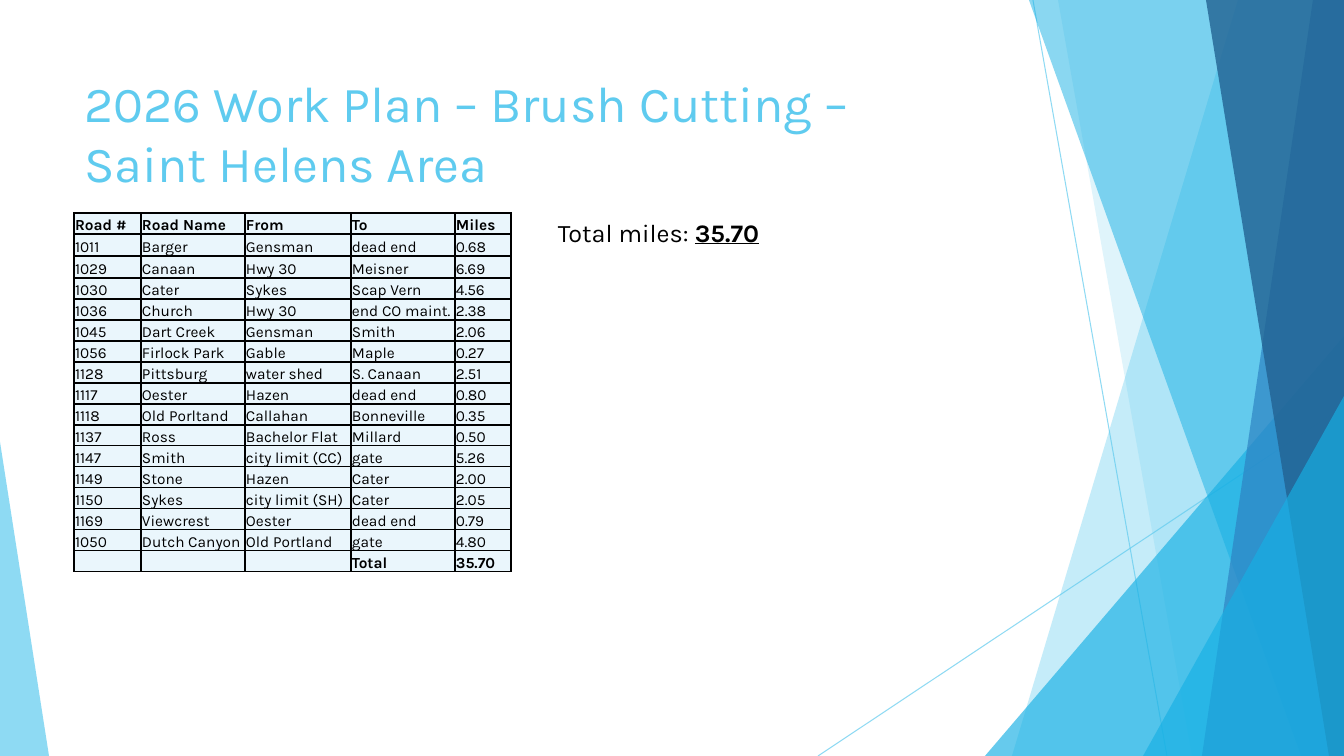
from pptx import Presentation
from pptx.dml.color import RGBColor
from pptx.enum.shapes import MSO_CONNECTOR, MSO_SHAPE
from pptx.enum.text import MSO_ANCHOR, MSO_AUTO_SIZE, PP_ALIGN
from pptx.oxml import parse_xml
from pptx.oxml.ns import nsdecls
from pptx.util import Emu, Pt

WIDE, HIGH = 1344, 756
SKY = RGBColor(0x5F, 0xCB, 0xEF)
CYAN = RGBColor(0x17, 0xB0, 0xE4)
BLUE = RGBColor(0x2E, 0x83, 0xC3)
NAVY = RGBColor(0x22, 0x62, 0x92)
PALE = RGBColor(0xEA, 0xF6, 0xFC)
BLACK = RGBColor(0, 0, 0)

LINES = [(1033, 0, 1167, HIGH), (WIDE, 406, 818, HIGH)]
# Bands reach the right edge: top x, bottom x, colour, opacity in percent
BACK = [(1238, 1012, SKY, 36), (1058, 1192, SKY, 20)]
FRONT = [(1029, 1301, CYAN, 50), (1313, 1202, BLUE, 70),
         (1206, 1329, NAVY, 80)]

COLS = [67, 104, 106, 104, 56]
ROADS = [
    ("Road #", "Road Name", "From", "To", "Miles"),
    ("1011", "Barger", "Gensman", "dead end", "0.68"),
    ("1029", "Canaan", "Hwy 30", "Meisner", "6.69"),
    ("1030", "Cater", "Sykes", "Scap Vern", "4.56"),
    ("1036", "Church", "Hwy 30", "end CO maint.", "2.38"),
    ("1045", "Dart Creek", "Gensman", "Smith", "2.06"),
    ("1056", "Firlock Park", "Gable", "Maple", "0.27"),
    ("1128", "Pittsburg", "water shed", "S. Canaan", "2.51"),
    ("1117", "Oester", "Hazen", "dead end", "0.80"),
    ("1118", "Old Porltand", "Callahan", "Bonneville", "0.35"),
    ("1137", "Ross", "Bachelor Flat", "Millard", "0.50"),
    ("1147", "Smith", "city limit (CC)", "gate", "5.26"),
    ("1149", "Stone", "Hazen", "Cater", "2.00"),
    ("1150", "Sykes", "city limit (SH)", "Cater", "2.05"),
    ("1169", "Viewcrest", "Oester", "dead end", "0.79"),
    ("1050", "Dutch Canyon", "Old Portland", "gate", "4.80"),
    ("", "", "", "Total", "35.70"),
]


def px(num):
    return Emu(round(num * 914400 / 100.8))


def box(*nums):
    return [px(num) for num in nums]


def put(item, form):
    """Set each attribute named in form on item."""
    for name, value in form.items():
        setattr(item, name, value)


def fade(shape, pct):
    """Make the shape's colour pct percent opaque."""
    for tint in shape._element.spPr.xpath(".//a:srgbClr"):
        tint.append(parse_xml(
            f'<a:alpha {nsdecls("a")} val="{pct * 1000}"/>'))


def paint(shape, color, pct):
    shape.shadow.inherit = False
    shape.fill.solid()
    shape.fill.fore_color.rgb = color
    shape.line.fill.background()
    fade(shape, pct)


def add_line(slide, ends):
    line = slide.shapes.add_connector(MSO_CONNECTOR.STRAIGHT, *box(*ends))
    line.line.width = Pt(0.75)
    line.line.color.rgb = SKY
    fade(line, 70)
    line._element.spPr.append(parse_xml(f'<a:effectLst {nsdecls("a")}/>'))


def add_band(slide, top, base, color, pct):
    edge = slide.shapes.build_freeform(px(top), 0)
    edge.add_line_segments(
        [box(WIDE, 0), box(WIDE, HIGH), box(base, HIGH)], close=True)
    paint(edge.convert_to_shape(), color, pct)


def add_peak(slide, left, top, width, tip, color, pct):
    """Add a triangle on the bottom edge, its tip at a share of its width."""
    peak = slide.shapes.add_shape(
        MSO_SHAPE.ISOSCELES_TRIANGLE, *box(left, top, width, HIGH - top))
    peak.adjustments[0] = tip
    paint(peak, color, pct)


def add_run(para, text, size, color=BLACK, **form):
    run = para.add_run()
    run.text = text
    put(run.font, {"name": "Karla", "size": Pt(size), **form})
    run.font.color.rgb = color


def add_title(slide, first, second):
    title = slide.shapes.title
    put(title, dict(zip(("left", "top", "width", "height"),
                        box(74, 67, 948, 145))))
    frame = title.text_frame
    put(frame, {"word_wrap": True, "auto_size": MSO_AUTO_SIZE.NONE,
                "vertical_anchor": MSO_ANCHOR.TOP})
    para = frame.paragraphs[0]
    para.alignment = PP_ALIGN.LEFT
    add_run(para, first, 36, SKY)
    para.add_line_break()
    add_run(para, second, 36, SKY)


def fill_cell(cell, text, bold):
    put(cell, {"margin_left": px(1), "margin_right": px(1),
               "margin_top": px(1), "margin_bottom": 0,
               "vertical_anchor": MSO_ANCHOR.BOTTOM})
    for side in "LRTB":
        cell._tc.get_or_add_tcPr().append(parse_xml(
            f'<a:ln{side} {nsdecls("a")} w="12700"><a:solidFill>'
            f'<a:srgbClr val="{BLACK}"/></a:solidFill></a:ln{side}>'))
    cell.fill.solid()
    cell.fill.fore_color.rgb = PALE
    para = cell.text_frame.paragraphs[0]
    if text:
        add_run(para, text, 11, bold=bold)
    else:
        para._p.append(parse_xml(
            f'<a:endParaRPr {nsdecls("a")} sz="1100"/>'))


def add_roads(slide):
    count = len(ROADS)
    table = slide.shapes.add_table(
        count, len(COLS), *box(74, 213, sum(COLS), 21 * count + 2)).table
    put(table, {"first_row": False, "horz_banding": False})
    for col, width in zip(table.columns, COLS):
        col.width = px(width)
    for num, (row, texts) in enumerate(zip(table.rows, ROADS)):
        row.height = px(22 if num in (1, 2) else 21)
        for cell, text in zip(row.cells, texts):
            fill_cell(cell, text, num in (0, count - 1))


def add_total(slide):
    frame = slide.shapes.add_textbox(*box(548, 212, 232, 40)).text_frame
    frame.word_wrap = True
    para = frame.paragraphs[0]
    add_run(para, "Total miles: ", 18)
    add_run(para, ROADS[-1][-1], 18, bold=True, underline=True)


def main():
    deck = Presentation()
    put(deck, {"slide_width": px(WIDE), "slide_height": px(HIGH)})
    slide = deck.slides.add_slide(deck.slide_layouts[5])
    for ends in LINES:
        add_line(slide, ends)
    for band in BACK:
        add_band(slide, *band)
    add_peak(slide, 985, 336, 359, 1, CYAN, 66)
    for band in FRONT:
        add_band(slide, *band)
    add_peak(slide, 1143, 396, 201, 1, CYAN, 66)
    add_peak(slide, 0, 442, 49, 0, SKY, 70)
    add_title(slide, "2026 Work Plan – Brush Cutting –", "Saint Helens Area")
    add_roads(slide)
    add_total(slide)
    deck.save("out.pptx")


if __name__ == "__main__":
    main()
